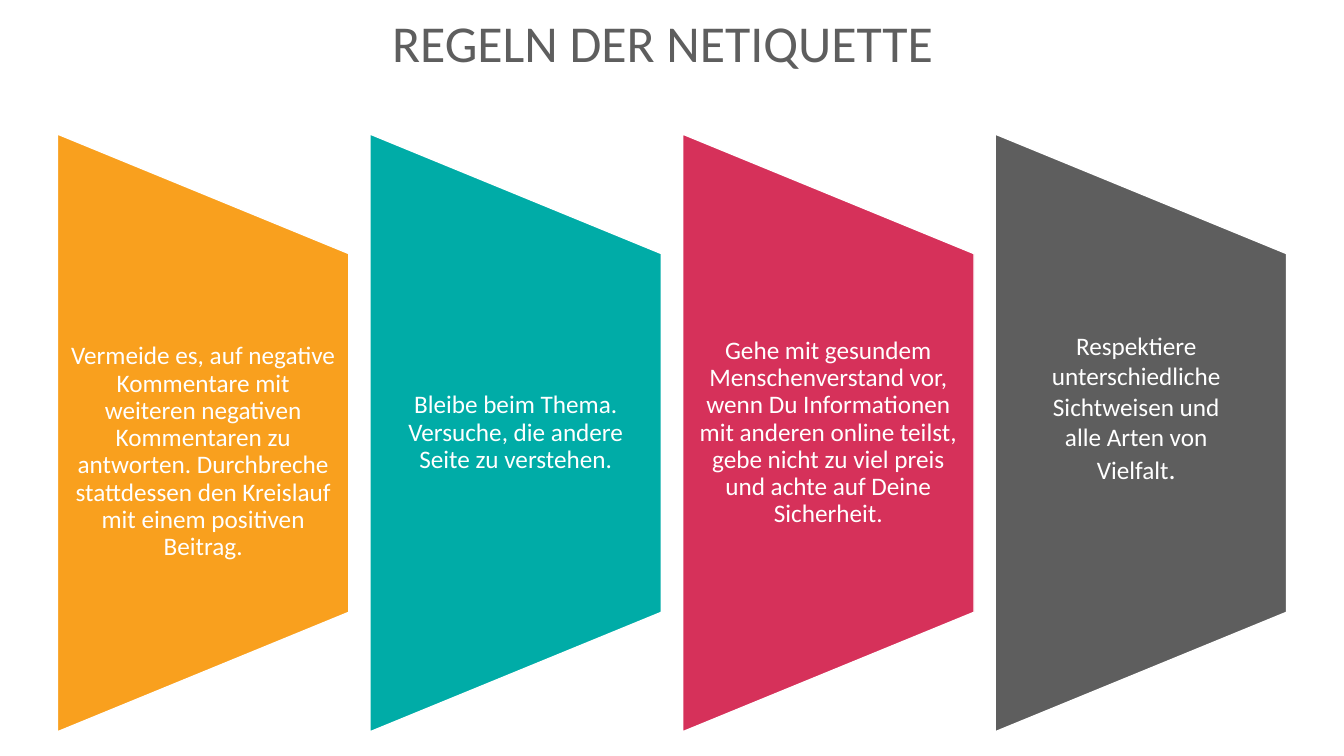
import pptx
import pptx.util
import pptx.dml.color
import pptx.enum.shapes
import pptx.enum.text

Inches = pptx.util.Inches
Pt = pptx.util.Pt
ALIGN = pptx.enum.text.PP_ALIGN
ANCHOR = pptx.enum.text.MSO_ANCHOR

COLORS = {
    "orange": "F9A01E",
    "teal": "00ACA7",
    "red": "D6315A",
    "gray": "5E5E5E",
    "white": "FFFFFF",
}

PANEL_W, PANEL_H, PITCH = 2.89, 5.93, 3.1
RULE_H = 3.56
CENTERED = (0, (PANEL_H - RULE_H) / 2, PANEL_W, RULE_H)
LOWERED = (0, CENTERED[1] + 0.19, PANEL_W, RULE_H)

RULES = [
    ("orange", LOWERED, 0.9, ANCHOR.MIDDLE, 0.12, 0,
     [("Vermeide es, auf negative Kommentare mit weiteren negativen Kommentaren zu "
       "antworten. Durchbreche stattdessen den Kreislauf mit einem positiven Beitrag.", 18)]),
    ("teal", CENTERED, 0.9, ANCHOR.MIDDLE, 0.12, 0,
     [("Bleibe beim Thema. Versuche, die andere Seite zu verstehen.", 18)]),
    ("red", CENTERED, 0.9, ANCHOR.MIDDLE, 0.12, 0,
     [("Gehe mit gesundem Menschenverstand vor, wenn Du Informationen mit anderen online "
       "teilst, gebe nicht zu viel preis und achte auf Deine Sicherheit.", 18)]),
    ("gray", (0.33, 1.9, 2.14, 2.12), 1.0, ANCHOR.TOP, 0.1, 0.05,
     [("Respektiere unterschiedliche Sichtweisen und alle Arten von Vielfalt", 18), (".", 20)]),
]


def rgb(name):
    return pptx.dml.color.RGBColor.from_string(COLORS[name])


def add_text(s, box, runs, color, align, spacing, anchor, inset_x, inset_y):
    tf = s.shapes.add_textbox(*map(Inches, box)).text_frame
    tf.word_wrap = True
    tf.vertical_anchor = anchor
    tf.margin_left = tf.margin_right = Inches(inset_x)
    tf.margin_top = tf.margin_bottom = Inches(inset_y)
    p = tf.paragraphs[0]
    p.alignment = align
    p.line_spacing = spacing
    for text, size in runs:
        r = p.add_run()
        r.text = text
        r.font.name = "Calibri"
        r.font.size = Pt(size)
        r.font.color.rgb = rgb(color)


def add_title(s, box):
    add_text(s, box, [("REGELN DER NETIQUETTE", 37)], "gray",
             ALIGN.LEFT, 0.9, ANCHOR.TOP, 0.1, 0.05)


def add_panel(s, box, rule):
    color, text_box, spacing, anchor, inset_x, inset_y, runs = rule
    x, y, w, h = box
    sp = s.shapes.add_shape(
        pptx.enum.shapes.MSO_SHAPE.FLOWCHART_MANUAL_OPERATION,
        Inches(x + (w - h) / 2), Inches(y + (h - w) / 2), Inches(h), Inches(w))
    sp.rotation = 270
    sp.shadow.inherit = False
    sp.fill.solid()
    sp.fill.fore_color.rgb = rgb(color)
    sp.line.color.rgb = rgb("white")
    sp.line.width = Pt(1)
    dx, dy, tw, th = text_box
    add_text(s, (x + dx, y + dy, tw, th), runs, "white",
             ALIGN.CENTER, spacing, anchor, inset_x, inset_y)


def add_panels(s, left, top):
    for i, rule in enumerate(RULES):
        add_panel(s, (left + i * PITCH, top, PANEL_W, PANEL_H), rule)


def main():
    prs = pptx.Presentation()
    prs.slide_width = Inches(13.33)
    prs.slide_height = Inches(7.5)
    s = prs.slides.add_slide(prs.slide_layouts[6])
    add_panels(s, 0.57, 1.33)
    add_title(s, (3.79, 0.13, 5.76, 1.04))
    prs.save("out.pptx")


if __name__ == "__main__":
    main()
